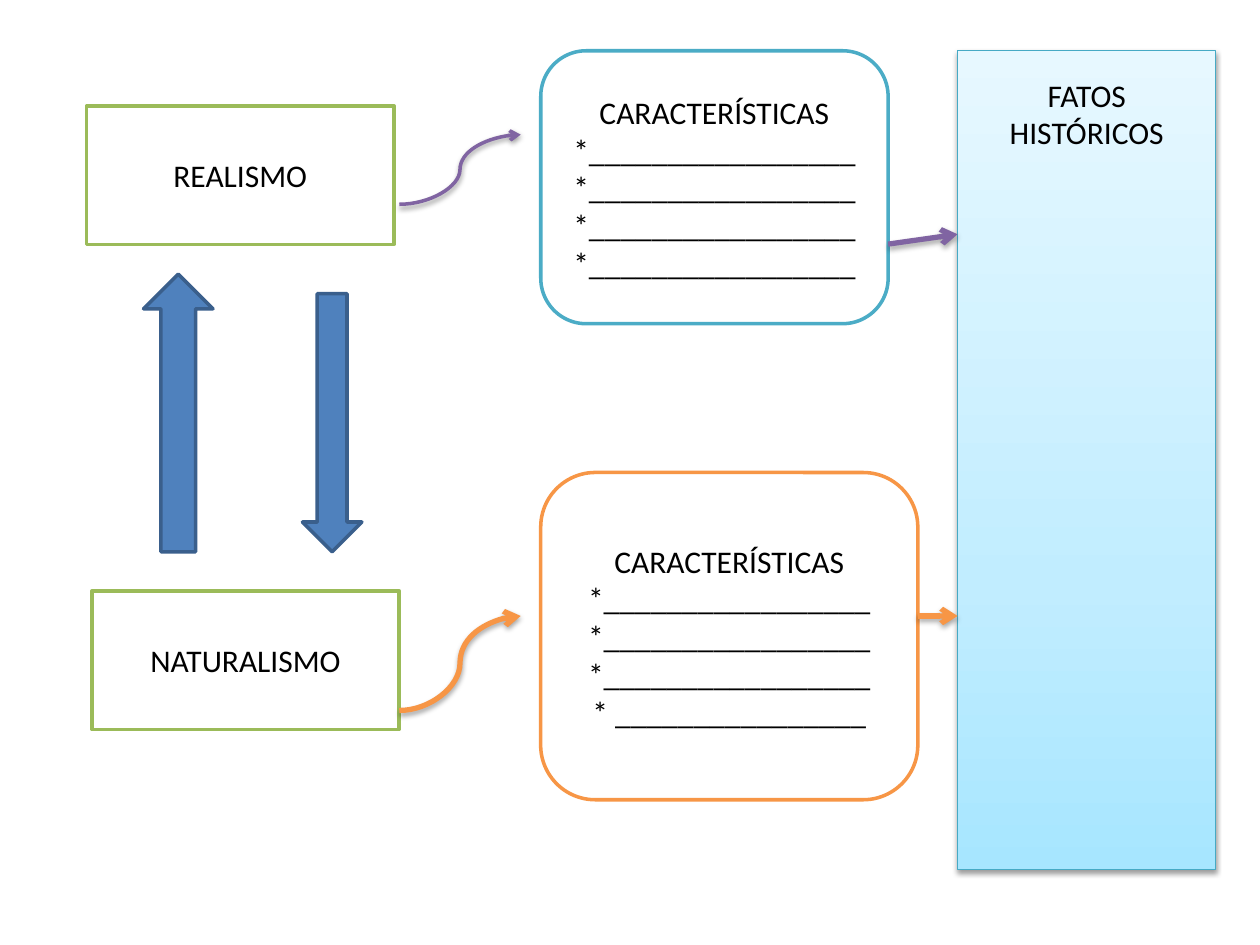
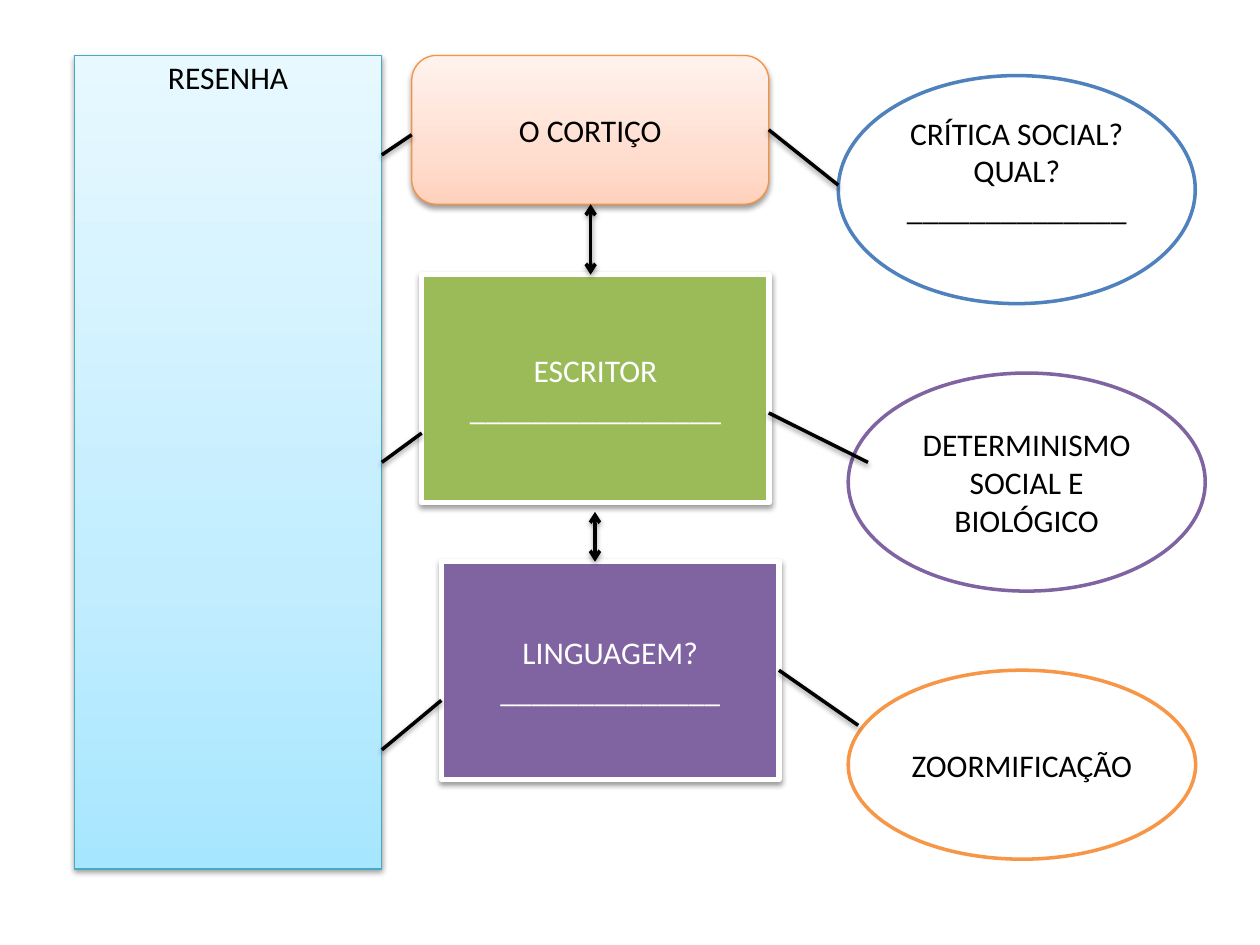
import pptx
import pptx.dml.color
import pptx.enum.shapes
import pptx.enum.text
import pptx.oxml
import pptx.oxml.ns
import pptx.util
from dataclasses import dataclass


@dataclass(frozen=True)
class Theme:
    font: str = "Calibri"
    text_size: float = 18
    line_height: float = 22
    inset_x: float = 7.2
    inset_y: float = 3.6
    black: str = "000000"
    white: str = "FFFFFF"
    blue: str = "4F81BD"
    dark_blue: str = "3A5F8C"
    green: str = "9BBB59"
    purple: str = "8064A2"
    aqua: str = "4BACC6"
    aqua_edge: str = "46AAC5"
    orange: str = "F79646"
    orange_edge: str = "F69240"
    aqua_gradient: tuple = ("A7E6FF", "C1EDFF", "E7F8FF")
    orange_gradient: tuple = ("FFD2BD", "FFDED0", "FFF2ED")
    gradient_stops: tuple = (0, 35, 100)


THEME = Theme()
SHAPES = pptx.enum.shapes.MSO_SHAPE
CONNECTORS = pptx.enum.shapes.MSO_CONNECTOR
STRAIGHT, CURVE = CONNECTORS.STRAIGHT, CONNECTORS.CURVE

# fill, line colour, line width, text colour, shadow
STYLES = {
    "green outline": (THEME.white, THEME.green, 2, THEME.black, False),
    "aqua outline": (THEME.white, THEME.aqua, 2, THEME.black, False),
    "orange outline": (THEME.white, THEME.orange, 2, THEME.black, False),
    "blue outline": (THEME.white, THEME.blue, 2, THEME.black, False),
    "purple outline": (THEME.white, THEME.purple, 2, THEME.black, False),
    "block arrow": (THEME.blue, THEME.dark_blue, 2, THEME.white, False),
    "panel": (THEME.aqua_gradient, THEME.aqua_edge, 0.75, THEME.black, True),
    "soft orange": (THEME.orange_gradient, THEME.orange_edge, 0.75, THEME.black, True),
    "solid green": (THEME.green, THEME.white, 3, THEME.white, True),
    "solid purple": (THEME.purple, THEME.white, 3, THEME.white, True),
}

BLANK_LINE = "_" * 17
TRAITS = ["CARACTERÍSTICAS"] + ["*" + BLANK_LINE] * 3

# preset, style, (left, top, width, height), paragraphs, lines left free below
MOVEMENTS = [
    (SHAPES.RECTANGLE, "green outline", (49.5, 60.5, 175.7, 79.2), ["REALISMO"], 0),
    (SHAPES.RECTANGLE, "green outline", (52.5, 337.7, 175.7, 79.2), ["NATURALISMO"], 0),
    (SHAPES.UP_ARROW, "block arrow", (82, 156.6, 39.7, 158.7), [], 0),
    (SHAPES.DOWN_ARROW, "block arrow", (172.8, 167.8, 34, 147.5), [], 0),
    (SHAPES.ROUNDED_RECTANGLE, "aqua outline", (309, 29, 198.5, 156),
     TRAITS + ["*" + BLANK_LINE], 0),
    (SHAPES.ROUNDED_RECTANGLE, "orange outline", (309, 270, 215.5, 187),
     TRAITS + ["* " + BLANK_LINE[1:]], 0),
    (SHAPES.RECTANGLE, "panel", (547.2, 28.8, 147.6, 468), ["FATOS HISTÓRICOS"], 18),
]
NOVEL = [
    (SHAPES.ROUNDED_RECTANGLE, "soft orange", (235.3, 31.7, 204, 85), ["O CORTIÇO"], 0),
    (SHAPES.RECTANGLE, "solid green", (241, 157, 198.5, 130.3),
     ["ESCRITOR", "_" * 16], 0),
    (SHAPES.RECTANGLE, "solid purple", (252.2, 321, 193, 124.6),
     ["LINGUAGEM?", "_" * 14], 0),
    (SHAPES.OVAL, "blue outline", (479, 43.2, 204, 130.3),
     ["CRÍTICA SOCIAL? QUAL?", "_" * 14], 1),
    (SHAPES.OVAL, "purple outline", (484.7, 213.2, 204, 124.6),
     ["DETERMINISMO SOCIAL E BIOLÓGICO"], 0),
    (SHAPES.OVAL, "orange outline", (484.7, 383, 198.5, 108), ["ZOORMIFICAÇÃO"], 0),
    (SHAPES.RECTANGLE, "panel", (42.5, 31.7, 175.7, 465), ["RESENHA"], 20),
]

# kind, colour, width, start, end, arrowheads
MOVEMENT_LINKS = [
    (CURVE, THEME.orange, 3, (228.2, 406), (297.6, 352), ["tailEnd"]),
    (CURVE, THEME.purple, 2, (228.2, 116.8), (297.6, 77), ["tailEnd"]),
    (STRAIGHT, THEME.purple, 3, (507.5, 139.5), (547.2, 133.9), ["tailEnd"]),
    (STRAIGHT, THEME.orange, 3, (524.5, 352), (547.2, 352), ["tailEnd"]),
]
BOTH_ENDS = ["headEnd", "tailEnd"]
NOVEL_LINKS = [
    (STRAIGHT, THEME.black, 2, start, end, heads)
    for start, end, heads in [
        ((218.2, 428.5), (252.2, 400.2), []),
        ((218.2, 264.2), (241, 247.5), []),
        ((218.2, 88.5), (235.3, 77), []),
        ((439.3, 74.2), (479, 105.8), []),
        ((439.3, 236), (496, 264.2), []),
        ((445.1, 383), (490.4, 414.5), []),
        ((337.5, 116.7), (337.5, 157), BOTH_ENDS),
        ((340, 292.5), (340, 321), BOTH_ENDS),
    ]
]
SLIDES = [(MOVEMENTS, MOVEMENT_LINKS), (NOVEL, NOVEL_LINKS)]


def points(values):
    return [pptx.util.Pt(value) for value in values]


def rgb(colour):
    return pptx.dml.color.RGBColor.from_string(colour)


def element(content):
    namespace = pptx.oxml.ns.nsdecls("a")
    tag, rest = content[1:].split(" ", 1)
    return pptx.oxml.parse_xml(f"<{tag} {namespace} {rest}")


def set_shadow(properties, visible, distance=1.6, opacity=38):
    for effects in properties.findall(pptx.oxml.ns.qn("a:effectLst")):
        properties.remove(effects)
    shadow = (
        f'<a:outerShdw blurRad="{pptx.util.Pt(3.1)}" dist="{pptx.util.Pt(distance)}" '
        f'dir="5400000" rotWithShape="0"><a:srgbClr val="{THEME.black}">'
        f'<a:alpha val="{opacity * 1000}"/></a:srgbClr></a:outerShdw>'
    )
    properties.append(element(f"<a:effectLst >{shadow if visible else ''}</a:effectLst>"))


def set_fill(shape, fill):
    if isinstance(fill, str):
        shape.fill.solid()
        shape.fill.fore_color.rgb = rgb(fill)
        return
    stops = "".join(
        f'<a:gs pos="{position * 1000}"><a:srgbClr val="{colour}"/></a:gs>'
        for position, colour in zip(THEME.gradient_stops, fill)
    )
    geometry = shape._element.spPr.find(pptx.oxml.ns.qn("a:prstGeom"))
    geometry.addnext(element(
        f'<a:gradFill rotWithShape="1"><a:gsLst>{stops}</a:gsLst>'
        '<a:lin ang="16200000" scaled="0"/></a:gradFill>'
    ))


def set_line(line, colour, width):
    line.color.rgb = rgb(colour)
    line.width = pptx.util.Pt(width)


def write_text(shape, paragraphs, colour, free_lines):
    frame = shape.text_frame
    frame.word_wrap = True
    frame.vertical_anchor = pptx.enum.text.MSO_ANCHOR.MIDDLE
    frame.margin_left = frame.margin_right = pptx.util.Pt(THEME.inset_x)
    frame.margin_top = pptx.util.Pt(THEME.inset_y)
    frame.margin_bottom = pptx.util.Pt(THEME.inset_y + free_lines * THEME.line_height)
    frame.text = "\n".join(paragraphs)
    for paragraph in frame.paragraphs:
        paragraph.alignment = pptx.enum.text.PP_ALIGN.CENTER
        paragraph.font.name = THEME.font
        paragraph.font.size = pptx.util.Pt(THEME.text_size)
        paragraph.font.color.rgb = rgb(colour)


def add_box(slide, preset, style, place, paragraphs, free_lines):
    fill, line_colour, line_width, text_colour, shadow = STYLES[style]
    shape = slide.shapes.add_shape(preset, *points(place))
    set_fill(shape, fill)
    set_line(shape.line, line_colour, line_width)
    shape.shadow.inherit = False
    set_shadow(shape._element.spPr, shadow)
    if paragraphs:
        write_text(shape, paragraphs, text_colour, free_lines)


def add_link(slide, kind, colour, width, start, end, heads):
    connector = slide.shapes.add_connector(kind, *points(start + end))
    set_line(connector.line, colour, width)
    properties = connector._element.spPr
    outline = properties.find(pptx.oxml.ns.qn("a:ln"))
    for head in heads:
        outline.append(element(f'<a:{head} type="arrow"/>'))
    if width == 3:
        set_shadow(properties, True, distance=1.8, opacity=35)
    else:
        set_shadow(properties, True)


def main():
    presentation = pptx.Presentation()
    presentation.slide_width, presentation.slide_height = points((720, 540))
    blank_layout = presentation.slide_layouts[6]
    for boxes, links in SLIDES:
        slide = presentation.slides.add_slide(blank_layout)
        for box in boxes:
            add_box(slide, *box)
        for link in links:
            add_link(slide, *link)
    presentation.save("out.pptx")


if __name__ == "__main__":
    main()
